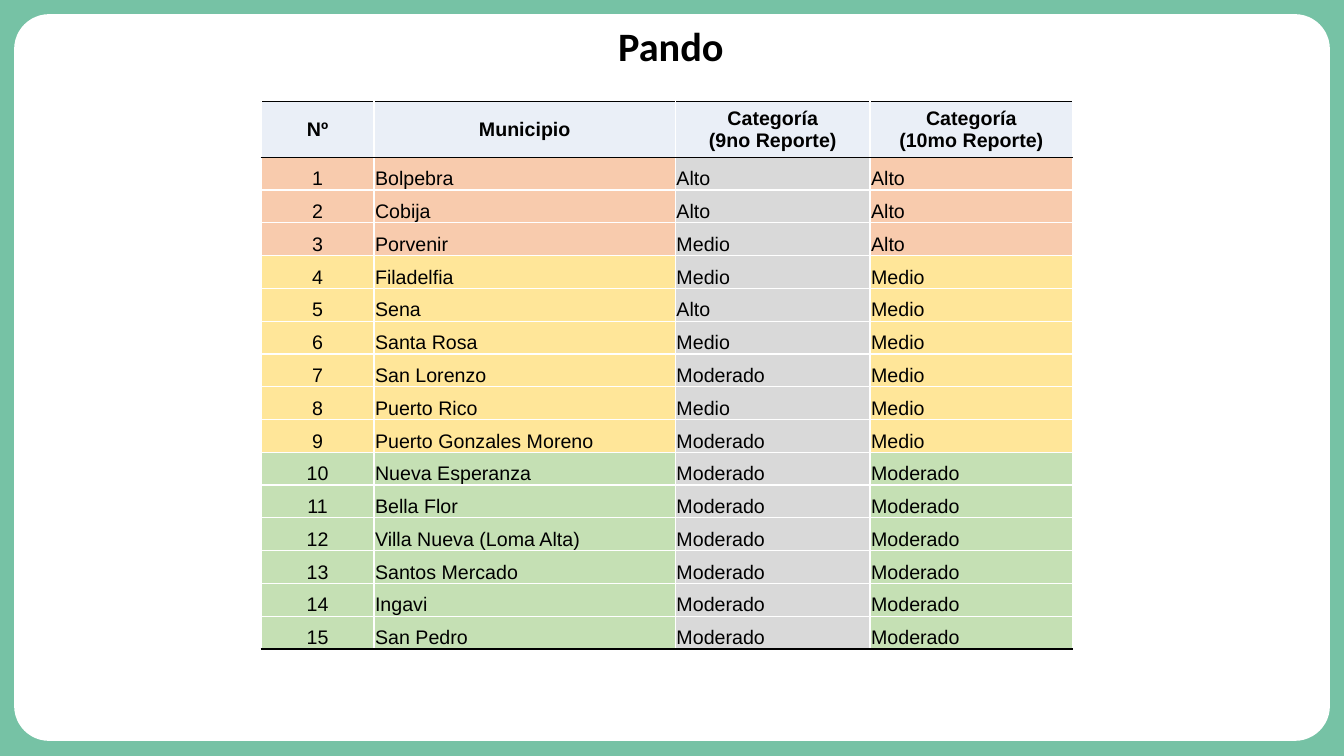
"""Build the Pando slide: municipalities and their category in two reports."""
from lxml import etree
from pptx import Presentation
from pptx.dml.color import RGBColor
from pptx.enum.shapes import MSO_SHAPE
from pptx.enum.text import MSO_ANCHOR, PP_ALIGN
from pptx.oxml.ns import qn
from pptx.util import Inches, Pt

ROUNDED = MSO_SHAPE.ROUNDED_RECTANGLE
CENTER, LEFT = PP_ALIGN.CENTER, PP_ALIGN.LEFT
MIDDLE, BOTTOM = MSO_ANCHOR.MIDDLE, MSO_ANCHOR.BOTTOM
GREEN = RGBColor(0x76, 0xC2, 0xA5)
WHITE = RGBColor(0xFF, 0xFF, 0xFF)
BLACK = RGBColor(0x00, 0x00, 0x00)
HEADER_FILL = RGBColor(0xEA, 0xEF, 0xF7)
PREVIOUS_FILL = RGBColor(0xD9, 0xD9, 0xD9)
CATEGORY_FILLS = {
    "Alto": RGBColor(0xF8, 0xCB, 0xAD),
    "Medio": RGBColor(0xFF, 0xE6, 0x99),
    "Moderado": RGBColor(0xC5, 0xE0, 0xB4),
}
HEADERS = ["Nº", "Municipio", "Categoría\n(9no Reporte)", "Categoría\n(10mo Reporte)"]
MUNICIPALITIES = [
    ("Bolpebra", "Alto", "Alto"),
    ("Cobija", "Alto", "Alto"),
    ("Porvenir", "Medio", "Alto"),
    ("Filadelfia", "Medio", "Medio"),
    ("Sena", "Alto", "Medio"),
    ("Santa Rosa", "Medio", "Medio"),
    ("San Lorenzo", "Moderado", "Medio"),
    ("Puerto Rico", "Medio", "Medio"),
    ("Puerto Gonzales Moreno", "Moderado", "Medio"),
    ("Nueva Esperanza", "Moderado", "Moderado"),
    ("Bella Flor", "Moderado", "Moderado"),
    ("Villa Nueva (Loma Alta)", "Moderado", "Moderado"),
    ("Santos Mercado", "Moderado", "Moderado"),
    ("Ingavi", "Moderado", "Moderado"),
    ("San Pedro", "Moderado", "Moderado"),
]
COLUMN_WIDTHS = [1.12, 2.99, 1.93, 2.01]
TABLE_HEIGHT, HEADER_HEIGHT = 5.43, 0.55


def write_text(text_frame, text, font="Arial", size=14, bold=False, align=LEFT, spacing=1.0):
    """Fill a text frame, one paragraph for each line of text."""
    text_frame.text = text
    for paragraph in text_frame.paragraphs:
        paragraph.alignment = align
        paragraph.line_spacing = spacing
        for run in paragraph.runs:
            run.font.name = font
            run.font.size = Pt(size)
            run.font.bold = bold
            run.font.color.rgb = BLACK


def add_borders(cell, top, bottom):
    """Draw 1 pt borders, white at the sides."""
    properties = cell._tc.get_or_add_tcPr()
    for side, color in (("L", WHITE), ("R", WHITE), ("T", top), ("B", bottom)):
        line = etree.SubElement(properties, qn(f"a:ln{side}"), w=str(Pt(1)))
        fill = etree.SubElement(line, qn("a:solidFill"))
        etree.SubElement(fill, qn("a:srgbClr"), val=str(color))


presentation = Presentation()
presentation.slide_width = Inches(13.33)
presentation.slide_height = Inches(7.5)
slide = presentation.slides.add_slide(presentation.slide_layouts[6])
slide.background.fill.solid()
slide.background.fill.fore_color.rgb = GREEN

panel = slide.shapes.add_shape(ROUNDED, Inches(0.14), Inches(0.14), Inches(13.05), Inches(7.21))
panel.adjustments[0] = 0.048
panel.shadow.inherit = False
panel.fill.solid()
panel.fill.fore_color.rgb = WHITE
panel.line.fill.background()

title = slide.shapes.add_textbox(Inches(0.52), Inches(0.21), Inches(12.27), Inches(0.55))
title.text_frame.word_wrap = True
title.text_frame.vertical_anchor = MIDDLE
write_text(title.text_frame, "Pando", font="Calibri", size=28.8, bold=True, align=CENTER, spacing=0.9)

last_row = len(MUNICIPALITIES)
table = slide.shapes.add_table(
    last_row + 1, len(HEADERS), Inches(2.59), Inches(1.01),
    Inches(sum(COLUMN_WIDTHS)), Inches(TABLE_HEIGHT),
).table
table.first_row = True
table.horz_banding = False
for column, width in zip(table.columns, COLUMN_WIDTHS):
    column.width = Inches(width)
for row in table.rows:
    row.height = Inches((TABLE_HEIGHT - HEADER_HEIGHT) / last_row)
table.rows[0].height = Inches(HEADER_HEIGHT)

rows = [HEADERS] + [(str(number), *entry) for number, entry in enumerate(MUNICIPALITIES, 1)]
for row_index, values in enumerate(rows):
    is_header = row_index == 0
    row_fill = HEADER_FILL if is_header else CATEGORY_FILLS[values[3]]
    top = BLACK if row_index <= 1 else WHITE
    bottom = BLACK if row_index in (0, last_row) else WHITE
    for column_index, text in enumerate(values):
        cell = table.cell(row_index, column_index)
        centered = is_header or column_index == 0
        inset = Inches(0 if centered else 0.01)
        cell.margin_left = cell.margin_right = cell.margin_top = inset
        cell.margin_bottom = Inches(0)
        cell.vertical_anchor = MIDDLE if is_header else BOTTOM
        add_borders(cell, top, bottom)
        cell.fill.solid()
        is_previous = column_index == 2 and not is_header
        cell.fill.fore_color.rgb = PREVIOUS_FILL if is_previous else row_fill
        write_text(cell.text_frame, text, bold=is_header, align=CENTER if centered else LEFT)

presentation.save("out.pptx")
